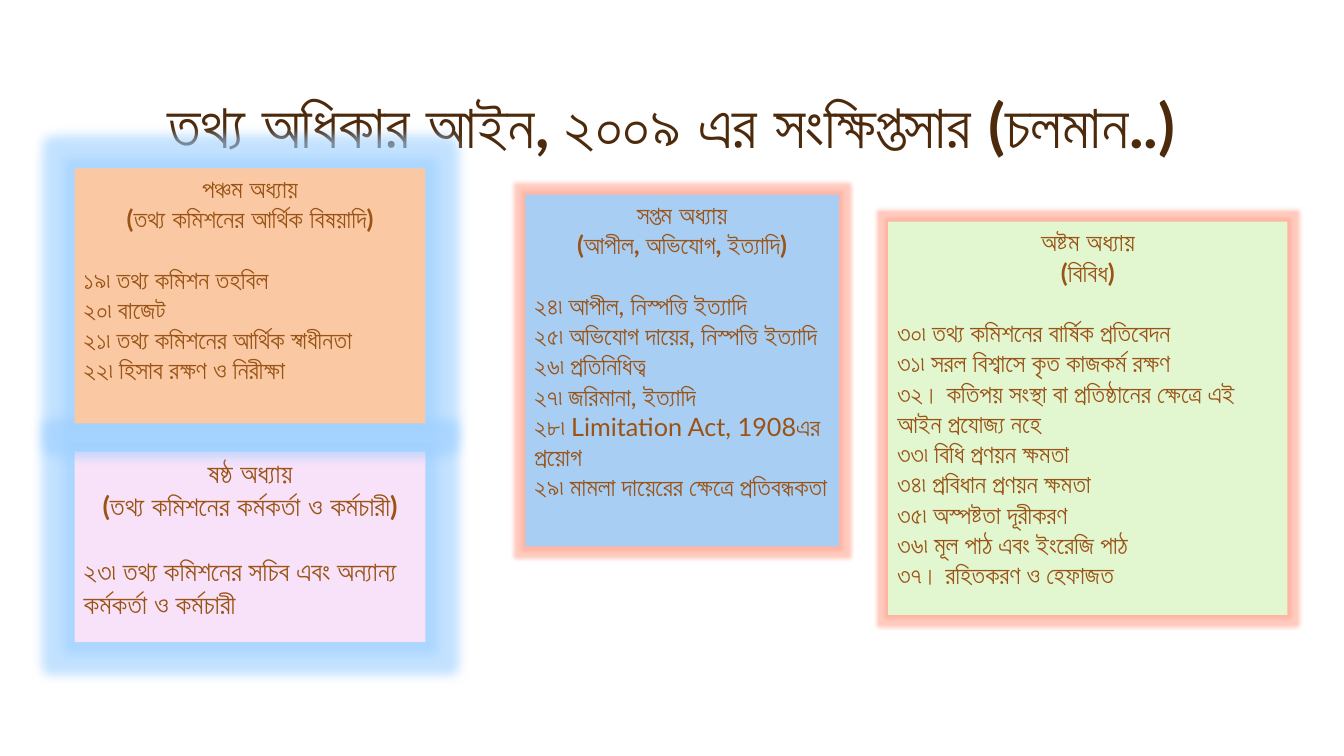
from lxml import etree
from pptx import Presentation
from pptx.dml.color import RGBColor
from pptx.enum.shapes import MSO_SHAPE
from pptx.enum.text import MSO_ANCHOR, MSO_AUTO_SIZE, PP_ALIGN
from pptx.oxml.ns import qn
from pptx.util import Inches, Pt

RECTANGLE = MSO_SHAPE.RECTANGLE
TOP, BOTTOM = MSO_ANCHOR.TOP, MSO_ANCHOR.BOTTOM
LEFT, CENTER = PP_ALIGN.LEFT, PP_ALIGN.CENTER
NO_AUTOFIT = MSO_AUTO_SIZE.NONE

FONT = "Lato"
DARK_BROWN = RGBColor(0x4D, 0x2A, 0x0B)
BROWN = RGBColor(0x9A, 0x53, 0x15)
BLUE = RGBColor(0xA8, 0xCE, 0xF4)
PINK = RGBColor(0xF8, 0xE2, 0xF9)
ORANGE = RGBColor(0xFA, 0xC9, 0xA3)
GREEN = RGBColor(0xE2, 0xF6, 0xD0)
SKY_GLOW = RGBColor(0x9C, 0xCF, 0xFF)
CORAL_GLOW = RGBColor(0xFF, 0xA8, 0x94)

# Each chapter: box, fill, glow colour, glow radius, text size, heading, sections
CHAPTERS = [
    ((5.21, 1.93, 3.11, 3.49), BLUE, CORAL_GLOW, 0.08, 18,
     ["সপ্তম অধ্যায়", "(আপীল, অভিযোগ, ইত্যাদি)"],
     ["২৪৷ আপীল, নিস্পত্তি ইত্যাদি",
      "২৫৷ অভিযোগ দায়ের, নিস্পত্তি ইত্যাদি",
      "২৬৷ প্রতিনিধিত্ব",
      "২৭৷ জরিমানা, ইত্যাদি",
      "২৮৷ Limitation Act, 1908এর প্রয়োগ",
      "২৯৷ মামলা দায়েরের ক্ষেত্রে প্রতিবন্ধকতা"]),
    ((0.74, 4.48, 3.48, 1.89), PINK, SKY_GLOW, 0.22, 19.4,
     ["ষষ্ঠ অধ্যায়", "(তথ্য কমিশনের কর্মকর্তা ও কর্মচারী)"],
     ["২৩৷ তথ্য কমিশনের সচিব এবং অন্যান্য কর্মকর্তা ও কর্মচারী"]),
    ((0.74, 1.67, 3.48, 2.53), ORANGE, SKY_GLOW, 0.22, 18,
     ["পঞ্চম অধ্যায়", "(তথ্য কমিশনের আর্থিক বিষয়াদি)"],
     ["১৯৷ তথ্য কমিশন তহবিল",
      "২০৷ বাজেট",
      "২১৷ তথ্য কমিশনের আর্থিক স্বাধীনতা",
      "২২৷ হিসাব রক্ষণ ও নিরীক্ষা"]),
    ((8.81, 2.2, 3.96, 3.9), GREEN, CORAL_GLOW, 0.08, 18,
     ["অষ্টম অধ্যায়", "(বিবিধ)"],
     ["৩০৷ তথ্য কমিশনের বার্ষিক প্রতিবেদন",
      "৩১৷ সরল বিশ্বাসে কৃত কাজকর্ম রক্ষণ",
      "৩২। কতিপয় সংস্থা বা প্রতিষ্ঠানের ক্ষেত্রে এই আইন প্রযোজ্য নহে",
      "৩৩৷ বিধি প্রণয়ন ক্ষমতা",
      "৩৪৷ প্রবিধান প্রণয়ন ক্ষমতা",
      "৩৫৷ অস্পষ্টতা দূরীকরণ",
      "৩৬৷ মূল পাঠ এবং ইংরেজি পাঠ",
      "৩৭। রহিতকরণ ও হেফাজত"]),
]


def write_line(para, text, size, color=BROWN, bold=False, align=LEFT,
               space_before=0, line_spacing=1.0):
    para.alignment = align
    para.space_before = Pt(space_before)
    para.line_spacing = line_spacing
    span = para.add_run()
    span.text = text
    span.font.name = FONT
    span.font.size = Pt(size)
    span.font.bold = bold
    span.font.color.rgb = color


def add_glow(shape, color, radius):
    shape.shadow.inherit = False
    effects = shape.element.spPr.find(qn("a:effectLst"))
    glow = etree.SubElement(effects, qn("a:glow"), rad=str(Inches(radius)))
    tint = etree.SubElement(glow, qn("a:srgbClr"), val=str(color))
    etree.SubElement(tint, qn("a:alpha"), val="60000")


def place_title(page, box, text):
    title = page.shapes.title
    title.left, title.top, title.width, title.height = map(Inches, box)
    frame = title.text_frame
    frame.word_wrap = True
    frame.auto_size = NO_AUTOFIT
    frame.vertical_anchor = BOTTOM
    write_line(frame.paragraphs[0], text, 44, color=DARK_BROWN, bold=True,
               align=CENTER, line_spacing=0.9)


def add_chapter(page, box, fill, glow, radius, size, heading, sections):
    panel = page.shapes.add_shape(RECTANGLE, *map(Inches, box))
    panel.fill.solid()
    panel.fill.fore_color.rgb = fill
    panel.line.fill.background()
    add_glow(panel, glow, radius)

    frame = panel.text_frame
    frame.word_wrap = True
    frame.vertical_anchor = TOP
    frame.margin_left = frame.margin_right = Inches(0.09)
    for index, text in enumerate(heading + sections):
        para = frame.paragraphs[0] if index == 0 else frame.add_paragraph()
        is_heading = index < len(heading)
        # One line of space parts the heading from the sections
        gap = 1.2 * size if index == len(heading) else 0
        write_line(para, text, size, bold=is_heading,
                   align=CENTER if is_heading else LEFT, space_before=gap)


def main():
    deck = Presentation()
    deck.slide_width, deck.slide_height = Inches(13.33), Inches(7.5)
    page = deck.slides.add_slide(deck.slide_layouts.get_by_name("Title Only"))
    place_title(page, (1.16, 0.33, 11, 1.33),
                "তথ্য অধিকার আইন, ২০০৯ এর সংক্ষিপ্তসার (চলমান..)")
    for chapter in CHAPTERS:
        add_chapter(page, *chapter)
    deck.save("out.pptx")


if __name__ == "__main__":
    main()
